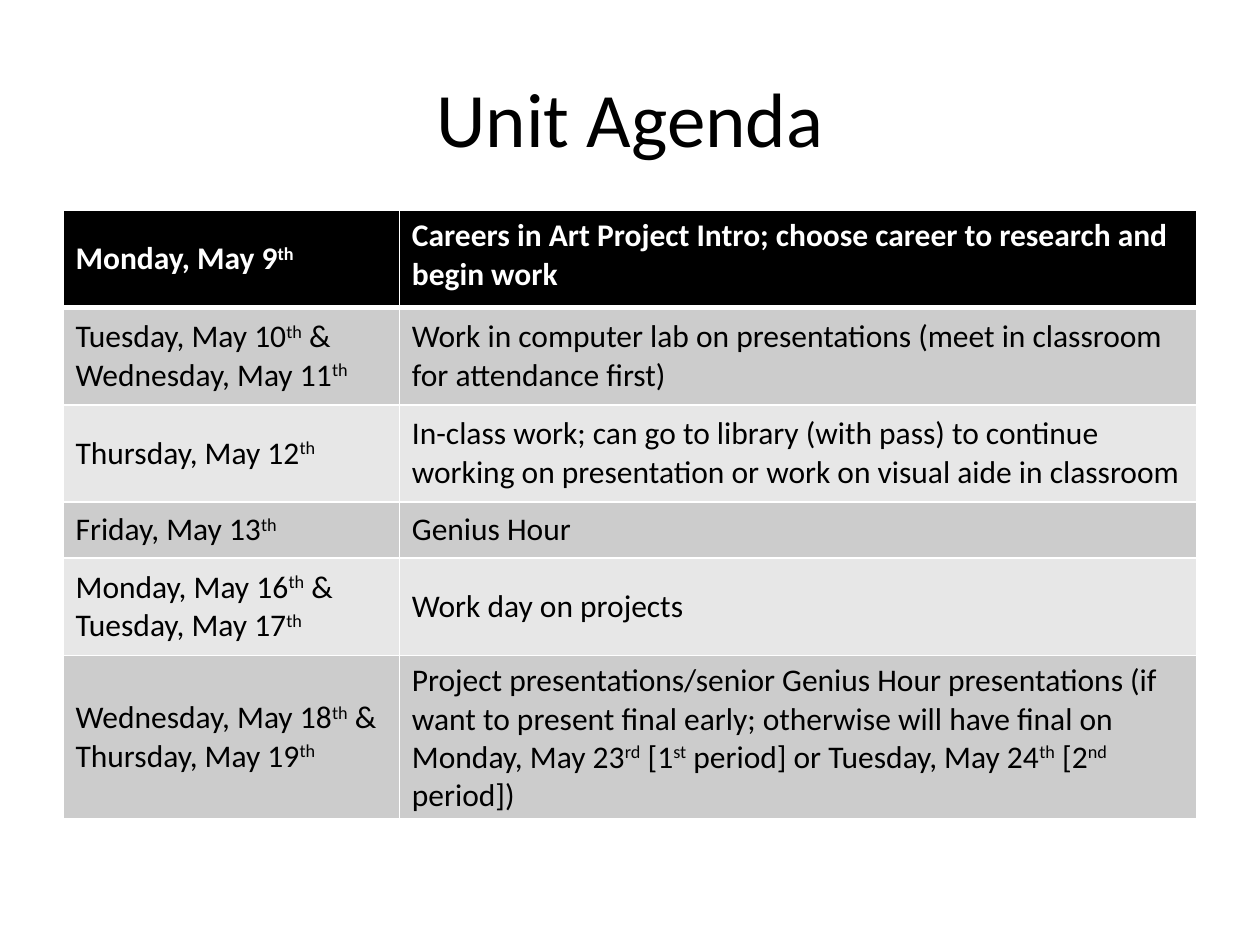
from dataclasses import dataclass

from lxml.etree import SubElement
from pptx import Presentation
from pptx.dml.color import RGBColor
from pptx.enum.text import MSO_ANCHOR, PP_ALIGN
from pptx.oxml.ns import qn
from pptx.util import Cm, Pt


@dataclass(frozen=True)
class Theme:
    font: str = "Calibri"
    title_size: int = 44
    body_size: int = 18
    text: str = "000000"
    header_text: str = "FFFFFF"
    header_fill: str = "000000"
    bands: tuple = ("E7E7E7", "CCCCCC")
    border: str = "FFFFFF"
    thin: int = 1
    thick: int = 3


THEME = Theme()

# Ordinal suffixes between carets are set as superscript
AGENDA = [
    ("Monday, May 9^th^",
     "Careers in Art Project Intro; choose career to research and begin work"),
    ("Tuesday, May 10^th^ & Wednesday, May 11^th^",
     "Work in computer lab on presentations (meet in classroom for attendance first)"),
    ("Thursday, May 12^th^",
     "In-class work; can go to library (with pass) to continue working on "
     "presentation or work on visual aide in classroom"),
    ("Friday, May 13^th^", "Genius Hour"),
    ("Monday, May 16^th^ & Tuesday, May 17^th^", "Work day on projects"),
    ("Wednesday, May 18^th^ & Thursday, May 19^th^",
     "Project presentations/senior Genius Hour presentations (if want to present "
     "final early; otherwise will have final on Monday, May 23^rd^ [1^st^ period] "
     "or Tuesday, May 24^th^ [2^nd^ period])"),
]
COL_WIDTHS = (6.78, 16.08)
ROW_HEIGHTS = (1.96, 1.96, 1.96, 1.13, 1.96, 2.79)


def add_runs(p, text, size, color, bold=False):
    for i, part in enumerate(text.split("^")):
        if not part:
            continue
        r = p.add_run()
        r.text = part
        r.font.name = THEME.font
        r.font.size = Pt(size)
        r.font.bold = bold
        r.font.color.rgb = RGBColor.from_string(color)
        if i % 2:
            r.font._element.set("baseline", "30000")


def set_borders(cell, **widths):
    tcPr = cell._tc.get_or_add_tcPr()
    for side in "LRTB":
        width = widths.get(side, THEME.thin)
        ln = SubElement(tcPr, qn(f"a:ln{side}"), w=str(Pt(width)))
        fill = SubElement(ln, qn("a:solidFill"))
        SubElement(fill, qn("a:srgbClr"), val=THEME.border)


def add_title(slide, text, left, top, width, height):
    tf = slide.shapes.add_textbox(Cm(left), Cm(top), Cm(width), Cm(height)).text_frame
    tf.word_wrap = True
    tf.vertical_anchor = MSO_ANCHOR.MIDDLE
    p = tf.paragraphs[0]
    p.alignment = PP_ALIGN.CENTER
    add_runs(p, text, THEME.title_size, THEME.text)


def fill_cell(cell, text, row, col):
    header = row == 0
    # Heavier rule between the header and the body
    set_borders(cell, T=THEME.thick if row == 1 else THEME.thin,
                B=THEME.thick if header else THEME.thin)
    cell.fill.solid()
    cell.fill.fore_color.rgb = RGBColor.from_string(
        THEME.header_fill if header else THEME.bands[row % 2])
    top_aligned = header and col == 1
    cell.vertical_anchor = MSO_ANCHOR.TOP if top_aligned else MSO_ANCHOR.MIDDLE
    add_runs(cell.text_frame.paragraphs[0], text, THEME.body_size,
             THEME.header_text if header else THEME.text, header)


def add_agenda(slide, left, top):
    table = slide.shapes.add_table(
        len(AGENDA), len(COL_WIDTHS), Cm(left), Cm(top),
        Cm(sum(COL_WIDTHS)), Cm(sum(ROW_HEIGHTS))).table
    for column, width in zip(table.columns, COL_WIDTHS):
        column.width = Cm(width)
    for i, (height, entry) in enumerate(zip(ROW_HEIGHTS, AGENDA)):
        table.rows[i].height = Cm(height)
        for j, text in enumerate(entry):
            fill_cell(table.cell(i, j), text, i, j)


def main():
    prs = Presentation()
    prs.slide_width, prs.slide_height = Cm(25.4), Cm(19.05)
    slide = prs.slides.add_slide(prs.slide_layouts[6])
    add_title(slide, "Unit Agenda", 1.27, 0.76, 22.86, 3.18)
    add_agenda(slide, 1.27, 4.24)
    prs.save("out.pptx")


if __name__ == "__main__":
    main()
